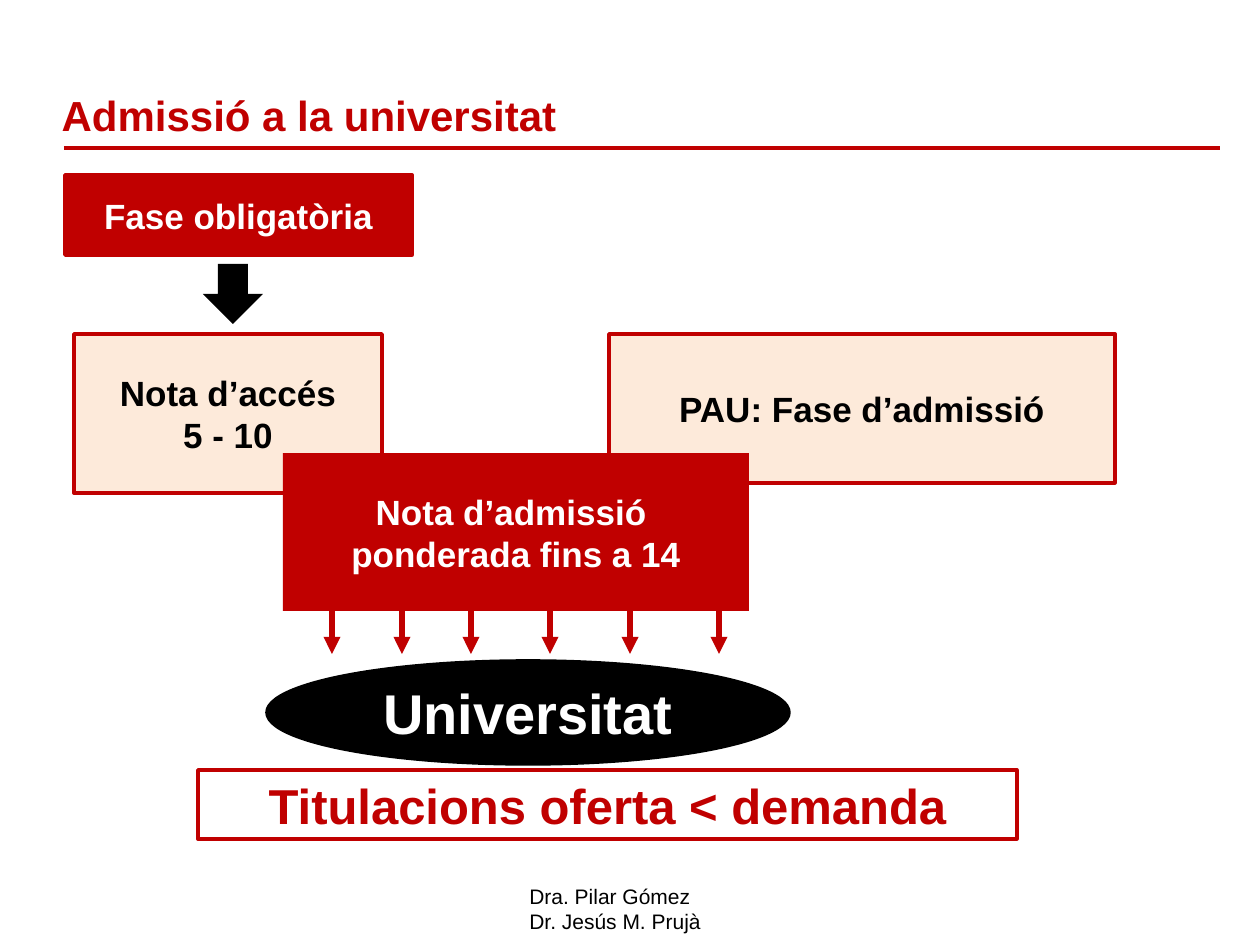
from lxml import etree
from pptx import Presentation
from pptx.dml.color import RGBColor
from pptx.enum.shapes import MSO_CONNECTOR, MSO_SHAPE
from pptx.enum.text import MSO_ANCHOR, MSO_AUTO_SIZE, PP_ALIGN
from pptx.oxml.ns import qn
from pptx.util import Emu, Pt

RECTANGLE, ELLIPSE, DOWN_ARROW = MSO_SHAPE.RECTANGLE, MSO_SHAPE.OVAL, MSO_SHAPE.DOWN_ARROW
STRAIGHT = MSO_CONNECTOR.STRAIGHT
LEFT, CENTER = PP_ALIGN.LEFT, PP_ALIGN.CENTER
TOP, MIDDLE = MSO_ANCHOR.TOP, MSO_ANCHOR.MIDDLE
NO_FIT = MSO_AUTO_SIZE.NONE
TITLE_ONLY = 5
EMU_PER_PX = 914400 / 126
FONT = "Arial"
COLORS = {"red": "C00000", "cream": "FDEADA", "black": "000000", "white": "FFFFFF"}


def px(length):
    """Turn a length in px into EMU."""
    return Emu(round(length * EMU_PER_PX))


def color(name):
    """Return the named colour."""
    return RGBColor.from_string(COLORS[name])


def write_text(shape, text, size=20, ink="black", bold=True, align=CENTER,
               anchor=MIDDLE, wrap=True):
    """Write text into a shape, one paragraph for each line."""
    frame = shape.text_frame
    frame.auto_size = NO_FIT
    frame.word_wrap = wrap
    frame.vertical_anchor = anchor
    frame.text = text
    for para in frame.paragraphs:
        para.alignment = align
        for span in para.runs:
            span.font.name = FONT
            span.font.size = Pt(size)
            span.font.bold = bold
            span.font.color.rgb = color(ink)


def add_box(slide, kind, bounds, fill, outline=None, text=None, **text_format):
    """Add a filled shape with an optional outline and text."""
    box = slide.shapes.add_shape(kind, *map(px, bounds))
    box.shadow.inherit = False
    box.fill.solid()
    box.fill.fore_color.rgb = color(fill)
    if outline:
        box.line.color.rgb = color(outline)
        box.line.width = Pt(2)
    else:
        box.line.fill.background()
    if text:
        write_text(box, text, **text_format)


def add_line(slide, start, end, width, arrow=False):
    """Add a red straight line, with an arrowhead at its end if asked."""
    line = slide.shapes.add_connector(STRAIGHT, *map(px, start + end))
    line.line.color.rgb = color("red")
    line.line.width = Pt(width)
    properties = line._element.spPr
    if arrow:
        outline = properties.find(qn("a:ln"))
        etree.SubElement(outline, qn("a:tailEnd"), type="triangle")
    etree.SubElement(properties, qn("a:effectLst"))


def add_title(slide, text, bounds):
    """Place and format the title placeholder."""
    title = slide.shapes.title
    title.left, title.top, title.width, title.height = map(px, bounds)
    write_text(title, text, size=24, ink="red", align=LEFT)


def add_credits(slide, text, bounds):
    """Add the authors' names at the foot of the slide."""
    box = slide.shapes.add_textbox(*map(px, bounds))
    write_text(box, text, size=12, bold=False, align=LEFT, anchor=TOP, wrap=False)


def main():
    """Build the slide on university admission."""
    deck = Presentation()
    deck.slide_width, deck.slide_height = px(1260), px(945)
    slide = deck.slides.add_slide(deck.slide_layouts[TITLE_ONLY])

    add_line(slide, (64, 148), (1220, 148), 2.25)
    add_credits(slide, "Dra. Pilar Gómez\nDr. Jesús M. Prujà", (517, 877, 199, 63))
    add_title(slide, "Admissió a la universitat", (49, 80, 1181, 69))

    add_box(slide, RECTANGLE, (65, 175, 347, 80), "red", "red",
            "Fase obligatòria", ink="white")
    add_box(slide, DOWN_ARROW, (203, 264, 60, 60), "black")
    add_box(slide, RECTANGLE, (74, 334, 308, 159), "cream", "red",
            "Nota d’accés\n5 - 10")
    add_box(slide, RECTANGLE, (609, 334, 506, 149), "cream", "red",
            "PAU: Fase d’admissió")
    add_box(slide, RECTANGLE, (283, 453, 466, 158), "red", None,
            "Nota d’admissió \nponderada fins a 14", ink="white")

    for x in (332, 402, 471, 550, 630, 719):
        add_line(slide, (x, 611), (x, 654), 3.25, arrow=True)

    add_box(slide, RECTANGLE, (198, 770, 819, 69), "white", "red",
            "Titulacions oferta < demanda", size=28, ink="red")
    add_box(slide, ELLIPSE, (267, 661, 522, 103), "black", "black",
            "Universitat", size=32, ink="white")

    deck.save("out.pptx")


if __name__ == "__main__":
    main()
